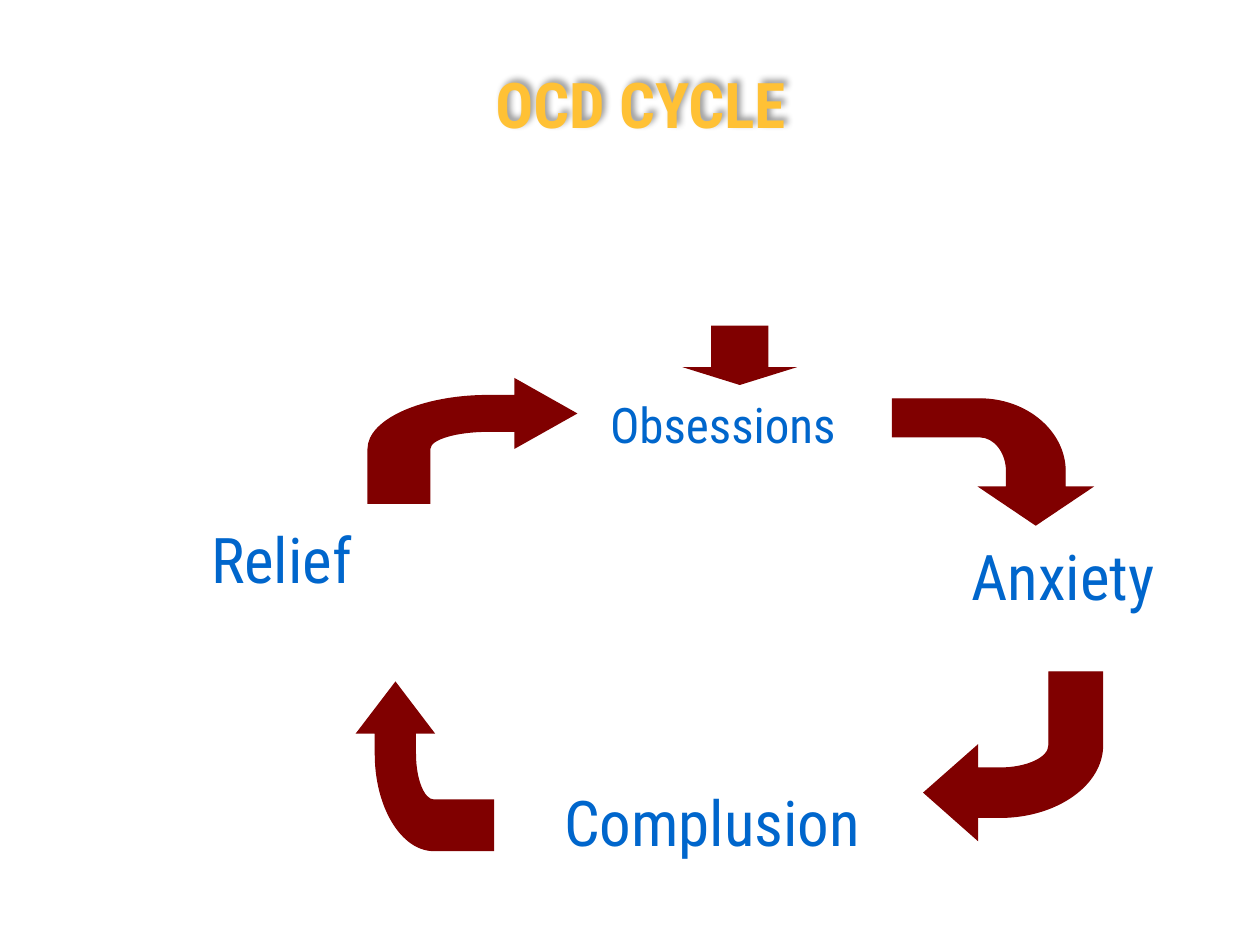
from dataclasses import dataclass

from lxml import etree
from pptx import Presentation
from pptx.dml.color import RGBColor
from pptx.enum.shapes import MSO_SHAPE
from pptx.enum.text import MSO_ANCHOR, MSO_AUTO_SIZE, PP_ALIGN
from pptx.oxml.ns import qn
from pptx.util import Pt

DOWN_ARROW = MSO_SHAPE.DOWN_ARROW
TOP = MSO_ANCHOR.TOP
CENTER = PP_ALIGN.CENTER
NO_AUTOFIT = MSO_AUTO_SIZE.NONE

FONT = "Roboto Condensed"
GOLD = "FFC135"
BLUE = "0066CC"
MAROON = "800000"

# Outlines lie on a square grid of this size
UNITS = 1000
FRAME = [(0, 0), (UNITS, 0), (UNITS, UNITS), (0, UNITS)]
BENT_ARROW = [(1000, 282), (700, 0), (700, 135), (575, 135), (0, 563), (0, 1000),
              (300, 1000), (300, 563), (575, 428), (700, 428), (700, 563)]
# Control points of the curved sides, by the number of the corner they end at
BENDS = {4: [(259, 135), (0, 328)], 8: [(300, 489), (424, 428)]}


@dataclass
class Box:
    left: float
    top: float
    width: float
    height: float

    def lengths(self) -> tuple:
        return Pt(self.left), Pt(self.top), Pt(self.width), Pt(self.height)


@dataclass
class Stage:
    text: str
    box: Box
    size: float = 36


@dataclass
class Bend:
    box: Box
    rotation: int
    outlined: bool = True


STAGES = [
    Stage("Relief", Box(28, 294, 266, 81)),
    Stage("Obsessions", Box(342, 222, 142, 34), 28),
    Stage("Anxiety", Box(495, 303.5, 225, 54)),
    Stage("Complusion", Box(317.5, 444, 179, 45)),
]

ARROWS = [
    Bend(Box(210, 216, 120, 72), 0, outlined=False),
    Bend(Box(195, 399, 96, 78), 270),
    Bend(Box(531, 207, 72, 114), 90),
    Bend(Box(528, 384, 102, 96), 180),
]


def color(value: str) -> RGBColor:
    return RGBColor.from_string(value)


def write(shape, text: str, size: float, ink: str, bold: bool = False) -> None:
    frame = shape.text_frame
    frame.text = text
    frame.auto_size = NO_AUTOFIT
    frame.word_wrap = False
    frame.vertical_anchor = TOP
    para = frame.paragraphs[0]
    para.alignment = CENTER
    font = para.runs[0].font
    font.name, font.size, font.bold = FONT, Pt(size), bold
    font.color.rgb = color(ink)


def add_soft_shadow(shape) -> None:
    shape.shadow.inherit = False
    effects = shape._element.spPr.find(qn("a:effectLst"))
    shadow = etree.SubElement(effects, qn("a:outerShdw"), blurRad=str(Pt(4)),
                              dist=str(Pt(3)), dir="18900000", rotWithShape="0")
    black = etree.SubElement(shadow, qn("a:srgbClr"), val="000000")
    etree.SubElement(black, qn("a:alpha"), val="40000")


def paint(shape, outlined: bool) -> None:
    shape.shadow.inherit = False
    shape.fill.solid()
    shape.fill.fore_color.rgb = color(MAROON)
    if outlined:
        shape.line.color.rgb = color(MAROON)
        shape.line.width = Pt(0.75)
        line = shape._element.spPr.find(qn("a:ln"))
        etree.SubElement(line, qn("a:miter"), lim="800000")
    else:
        shape.line.fill.background()


def add_outline(slide, box: Box, corners: list):
    left, top, width, height = box.lengths()
    builder = slide.shapes.build_freeform(
        *corners[0], scale=(width / UNITS, height / UNITS))
    builder.add_line_segments(corners[1:], close=True)
    return builder.convert_to_shape(left, top)


def curve_side(side, controls: list) -> None:
    """Turn a straight side of an outline into a cubic curve."""
    side.tag = qn("a:cubicBezTo")
    for position, (x, y) in enumerate(controls):
        point = etree.Element(qn("a:pt"), x=str(x), y=str(y))
        side.insert(position, point)


def add_bent_arrow(slide, arrow: Bend) -> None:
    shape = add_outline(slide, arrow.box, BENT_ARROW)
    sides = list(shape._element.spPr.iter(qn("a:lnTo")))
    for corner, controls in BENDS.items():
        curve_side(sides[corner - 1], controls)
    shape.rotation = arrow.rotation
    paint(shape, arrow.outlined)


def main() -> None:
    deck = Presentation()
    deck.slide_width, deck.slide_height = Pt(720), Pt(540)
    slide = deck.slides.add_slide(deck.slide_layouts[6])

    # Heading, lettered on an unfilled outline
    heading = add_outline(slide, Box(96, 34, 540, 146), FRAME)
    heading.fill.background()
    heading.line.fill.background()
    write(heading, "OCD CYCLE", 36, GOLD, bold=True)
    add_soft_shadow(heading)

    # Stages of the cycle
    for stage in STAGES:
        label = slide.shapes.add_textbox(*stage.box.lengths())
        write(label, stage.text, stage.size, BLUE)

    # Arrow into the cycle
    entry = slide.shapes.add_shape(DOWN_ARROW, *Box(390, 186, 65.5, 34).lengths())
    entry.adjustments[0], entry.adjustments[1] = 0.5, 0.3
    paint(entry, outlined=False)

    # Arrows between the stages
    for arrow in ARROWS:
        add_bent_arrow(slide, arrow)

    deck.save("out.pptx")


if __name__ == "__main__":
    main()
